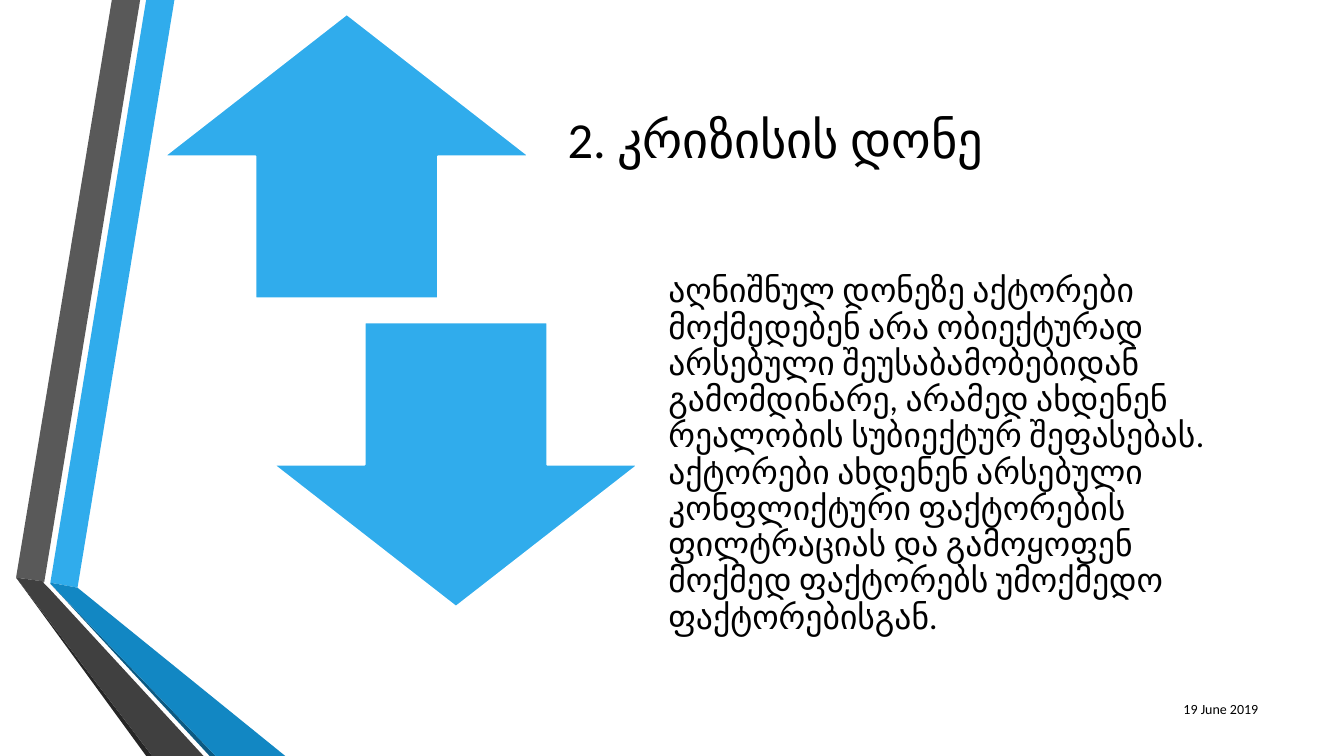
from pptx import Presentation
from pptx.dml.color import RGBColor
from pptx.enum.shapes import MSO_SHAPE
from pptx.enum.text import MSO_ANCHOR, MSO_AUTO_SIZE, PP_ALIGN
from pptx.util import Pt

UP, DOWN = MSO_SHAPE.UP_ARROW, MSO_SHAPE.DOWN_ARROW
MIDDLE = MSO_ANCHOR.MIDDLE
NO_FIT = MSO_AUTO_SIZE.NONE
LEFT, RIGHT = PP_ALIGN.LEFT, PP_ALIGN.RIGHT

WHITE = RGBColor(0xFF, 0xFF, 0xFF)
BLACK = RGBColor(0x00, 0x00, 0x00)
BLUE = RGBColor(0x30, 0xAC, 0xEC)
MID_BLUE = RGBColor(0x12, 0x87, 0xC3)
DARK_BLUE = RGBColor(0x0C, 0x5A, 0x82)
GREY = RGBColor(0x59, 0x59, 0x59)
DARK_GREY = RGBColor(0x40, 0x40, 0x40)
CHARCOAL = RGBColor(0x26, 0x26, 0x26)

RIBBONS = [
    (BLUE, [(36, 416.2), (55.4, 419.8), (124.6, 0), (104.4, 0)]),
    (GREY, [(100.1, 0), (79.9, 0), (11.5, 412.6), (31.7, 415.4)]),
    (CHARCOAL, [(11.5, 412.6), (104.4, 540), (108.7, 540)]),
    (DARK_BLUE, [(36, 416.9), (149.8, 540), (154.1, 540)]),
    (MID_BLUE, [(36, 416.2), (36, 416.9), (154.1, 540), (203.8, 540), (55.4, 419.8)]),
    (DARK_GREY, [(145.4, 540), (34.6, 419.8), (31, 416.2), (31.7, 415.4),
                 (11.5, 412.6), (108.7, 540)]),
]
ARROWS = [(UP, 117.4, 10.1), (DOWN, 195.4, 230.4)]
ARROW_W, ARROW_H = 260.6, 203
TEXT_W = 442.1

TITLE = "2. კრიზისის დონე"
BODY = (
    "აღნიშნულ დონეზე აქტორები მოქმედებენ არა ობიექტურად არსებული "
    "შეუსაბამობებიდან გამომდინარე, არამედ ახდენენ რეალობის სუბიექტურ "
    "შეფასებას. აქტორები ახდენენ არსებული კონფლიქტური ფაქტორების "
    "ფილტრაციას და გამოყოფენ მოქმედ ფაქტორებს უმოქმედო ფაქტორებისგან."
)


def write(tf, text, size, font, color, align=LEFT, spacing=1.0,
          insets=(7.2, 3.6, 7.2, 3.6)):
    tf.word_wrap = True
    tf.auto_size = NO_FIT
    tf.vertical_anchor = MIDDLE
    tf.margin_left, tf.margin_top, tf.margin_right, tf.margin_bottom = map(Pt, insets)
    p = tf.paragraphs[0]
    p.alignment = align
    p.line_spacing = spacing
    r = p.add_run()
    r.text = text
    r.font.size = Pt(size)
    r.font.name = font
    r.font.color.rgb = color


class Deck:
    font = "Calibri"
    color = BLACK

    def __init__(self, prs):
        self.s = prs.slides.add_slide(prs.slide_layouts[5])
        self.s.background.fill.solid()
        self.s.background.fill.fore_color.rgb = WHITE

    def ribbon(self, color, points):
        points = [(Pt(x), Pt(y)) for x, y in points]
        builder = self.s.shapes.build_freeform(*points[0], scale=1.0)
        builder.add_line_segments(points[1:], close=True)
        sp = builder.convert_to_shape()
        self.paint(sp, color)
        sp.line.fill.background()

    def arrow(self, kind, x, y, w, h):
        sp = self.s.shapes.add_shape(kind, Pt(x), Pt(y), Pt(w), Pt(h))
        self.paint(sp, BLUE)
        sp.line.color.rgb = WHITE
        sp.line.width = Pt(1.25)

    def paint(self, sp, color):
        sp.shadow.inherit = False
        sp.fill.solid()
        sp.fill.fore_color.rgb = color

    def title(self, text, x, y, w, h, size, **fmt):
        sp = self.s.shapes.title
        sp.left, sp.top, sp.width, sp.height = map(Pt, (x, y, w, h))
        write(sp.text_frame, text, size, self.font, self.color, **fmt)

    def text(self, text, x, y, w, h, size, **fmt):
        sp = self.s.shapes.add_textbox(Pt(x), Pt(y), Pt(w), Pt(h))
        write(sp.text_frame, text, size, self.font, self.color, **fmt)


def main():
    prs = Presentation()
    prs.slide_width, prs.slide_height = Pt(960), Pt(540)
    deck = Deck(prs)
    for color, points in RIBBONS:
        deck.ribbon(color, points)
    for kind, x, y in ARROWS:
        deck.arrow(kind, x, y, ARROW_W, ARROW_H)
    deck.title(TITLE, 385.2, 10.1, TEXT_W, ARROW_H, 36,
               spacing=0.9, insets=(20.2, 0, 20.2, 20.2))
    deck.text(BODY, 463.7, 184.3, TEXT_W, 295.2, 24,
              spacing=0.9, insets=(13.7, 0, 13.7, 13.7))
    deck.text("19 June 2019", 815.8, 491.8, 90, 28.8, 10, align=RIGHT)
    prs.save("out.pptx")


if __name__ == "__main__":
    main()
